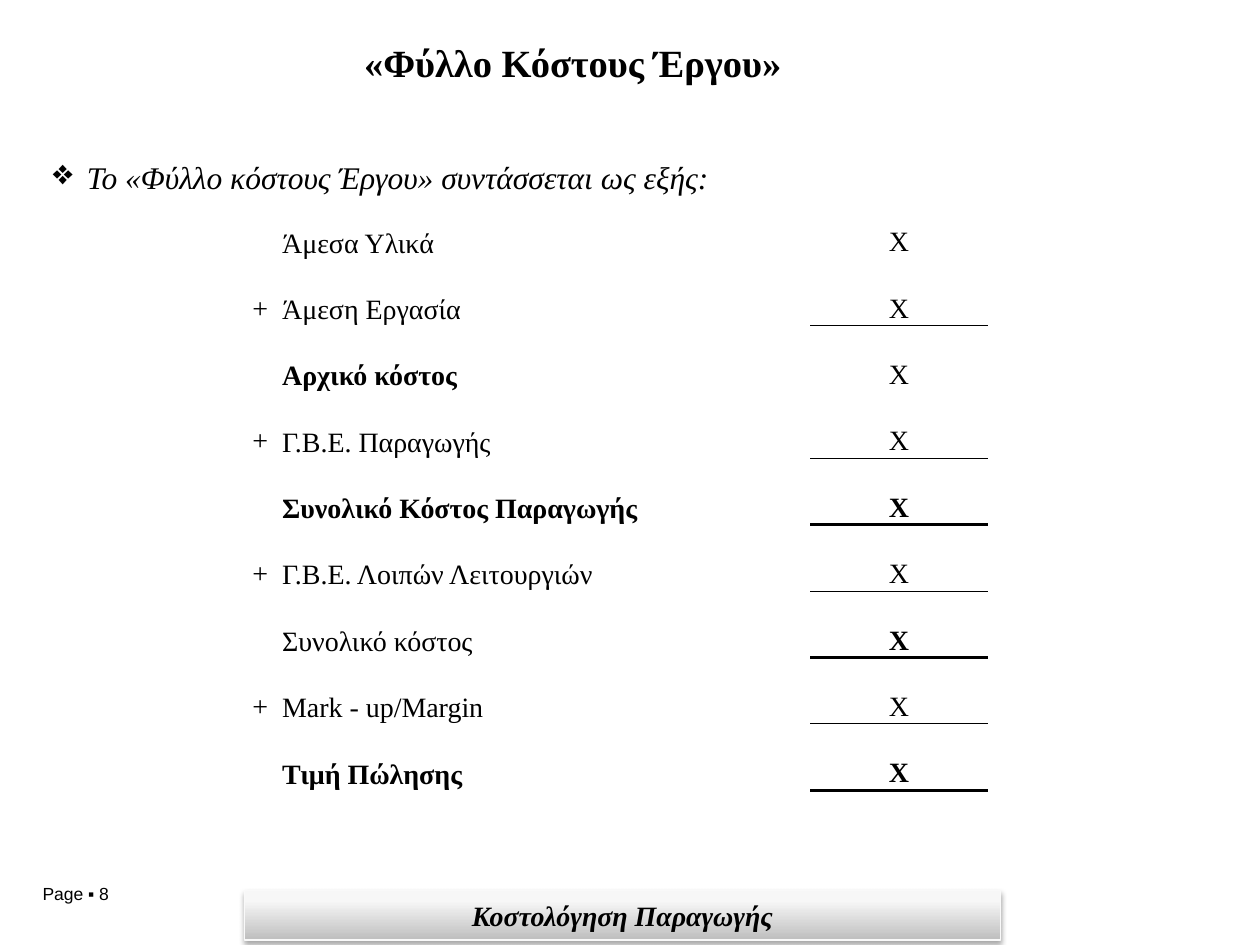
from dataclasses import dataclass
from lxml.etree import SubElement
from pptx import Presentation
from pptx.dml.color import RGBColor
from pptx.enum.shapes import MSO_SHAPE
from pptx.enum.text import MSO_ANCHOR, PP_ALIGN
from pptx.oxml import parse_xml
from pptx.oxml.ns import nsdecls, qn
from pptx.util import Inches, Pt


@dataclass(frozen=True)
class Theme:
    ink: RGBColor = RGBColor(0, 0, 0)
    edge: RGBColor = RGBColor(0xF9, 0xF9, 0xF9)
    serif: str = "Times New Roman"
    sans: str = "Arial"
    title: int = 22
    mark: int = 20
    lead: int = 18
    body: int = 16
    page: int = 10
    gap: int = 12


theme = Theme()


def add_run(para, text, size, bold=False, italic=False, face=theme.serif):
    run = para.add_run()
    run.text = text
    font = run.font
    font.name, font.size = face, Pt(size)
    font.bold, font.italic = bold, italic
    font.color.rgb = theme.ink


def add_box(left, top, width, height, side, edge):
    """Add a wrapped text box with side and top/bottom insets; return its paragraph."""
    box = slide.shapes.add_textbox(Inches(left), Inches(top), Inches(width), Inches(height))
    frame = box.text_frame
    frame.word_wrap = True
    frame.margin_left = frame.margin_right = Inches(side)
    frame.margin_top = frame.margin_bottom = Inches(edge)
    return frame.paragraphs[0]


deck = Presentation()
deck.slide_width, deck.slide_height = Inches(10), Inches(7.5)
slide = deck.slides.add_slide(deck.slide_layouts[6])

# Page number and title
add_run(add_box(0.24, 6.96, 1.47, 0.27, 0.1, 0.05), "Page ▪ 8", theme.page, face=theme.sans)

head = add_box(0.34, 0.3, 8.41, 0.71, 0, 0.05)
head.alignment, head.line_spacing = PP_ALIGN.CENTER, 0.9
add_run(head, "«Φύλλο Κόστους Έργου»", theme.title, bold=True)

# Footer bar
bar = slide.shapes.add_shape(
    MSO_SHAPE.RECTANGLE, Inches(1.94), Inches(7.07), Inches(6), Inches(0.39))
bar.line.color.rgb, bar.line.width = theme.edge, Pt(0.75)
stops = "".join(
    f'<a:gs pos="{pos * 1000}"><a:srgbClr val="{tone}"/></a:gs>'
    for pos, tone in ((0, "BEBEBE"), (80, "F7F7F7"), (100, "F8F8F8")))
props = bar._element.spPr
props.find(qn("a:prstGeom")).addnext(parse_xml(
    f'<a:gradFill {nsdecls("a")} rotWithShape="1"><a:gsLst>{stops}</a:gsLst>'
    '<a:lin ang="16200000" scaled="0"/></a:gradFill>'))
props.append(parse_xml(
    f'<a:effectLst {nsdecls("a")}><a:outerShdw blurRad="{Pt(3.1)}" dist="{Pt(1.8)}" '
    f'dir="5400000" rotWithShape="0"><a:srgbClr val="{theme.ink}">'
    '<a:alpha val="35000"/></a:srgbClr></a:outerShdw></a:effectLst>'))
frame = bar.text_frame
frame.margin_left = frame.margin_right = frame.margin_top = frame.margin_bottom = 0
frame.vertical_anchor = MSO_ANCHOR.MIDDLE
foot = frame.paragraphs[0]
foot.alignment = PP_ALIGN.CENTER
add_run(foot, "Κοστολόγηση Παραγωγής", theme.body, bold=True, italic=True)

# Lead sentence
lead = add_box(0.42, 1.23, 5.55, 0.46, 0, 0)
lead.alignment = PP_ALIGN.JUSTIFY
indent = lead._p.get_or_add_pPr()
indent.set("marL", str(Inches(0.2)))
indent.set("indent", str(Inches(-0.2)))
SubElement(indent, qn("a:buChar"), char="❖")
add_run(lead, " ", theme.mark, bold=True)
add_run(lead, "Το «Φύλλο κόστους Έργου» συντάσσεται ως εξής:", theme.lead, italic=True)

# Cost sheet: sign, label, bold label, bold amount, rule width below the amount
costs = [
    ("", "Άμεσα Υλικά", False, False, 0),
    ("+", "Άμεση Εργασία", False, False, 0.5),
    ("", "Αρχικό κόστος", True, False, 0),
    ("+", "Γ.Β.Ε. Παραγωγής", False, False, 0.5),
    ("", "Συνολικό Κόστος Παραγωγής", True, True, 2),
    ("+", "Γ.Β.Ε. Λοιπών Λειτουργιών", False, False, 0.5),
    ("", "Συνολικό κόστος", False, True, 2),
    ("+", "Mark - up/Margin", False, False, 0.5),
    ("", "Τιμή Πώλησης", True, True, 2),
]
widths = (0.33, 4.2, 1.41)
count = 2 * len(costs) - 1
grid = slide.shapes.add_table(
    count, len(widths), Inches(1.9), Inches(1.78), Inches(sum(widths)), Inches(4.38))
table = grid.table
table.first_row = table.horz_banding = False
style = table._tbl.tblPr.find(qn("a:tableStyleId"))
style.text = "{2D5ABB26-0587-4C30-8999-92F81FD0307C}"
for col, width in zip(table.columns, widths):
    col.width = Inches(width)

for num, row in enumerate(table.rows):
    spacer = num % 2 == 1
    row.height = Inches(0.25 if spacer else 0.26)
    sign, label, strong, total, rule = costs[num // 2]
    texts = ("", "", "") if spacer else (sign, label, "Χ")
    for pos, (cell, text) in enumerate(zip(row.cells, texts)):
        cell.fill.background()
        cell.margin_left = cell.margin_right = cell.margin_top = Inches(0.01)
        cell.margin_bottom = 0
        cell.vertical_anchor = MSO_ANCHOR.BOTTOM if pos == 1 else MSO_ANCHOR.MIDDLE
        para = cell.text_frame.paragraphs[0]
        para.alignment = PP_ALIGN.LEFT if pos == 1 else PP_ALIGN.CENTER
        if text:
            add_run(para, text, theme.body, bold=(False, strong, total)[pos])
        else:
            SubElement(para._p, qn("a:endParaRPr"), sz=str(theme.gap * 100))
    if rule and not spacer:
        row.cells[2]._tc.get_or_add_tcPr().insert(0, parse_xml(
            f'<a:lnB {nsdecls("a")} w="{Pt(rule)}"><a:solidFill>'
            f'<a:srgbClr val="{theme.ink}"/></a:solidFill></a:lnB>'))

deck.save("out.pptx")
